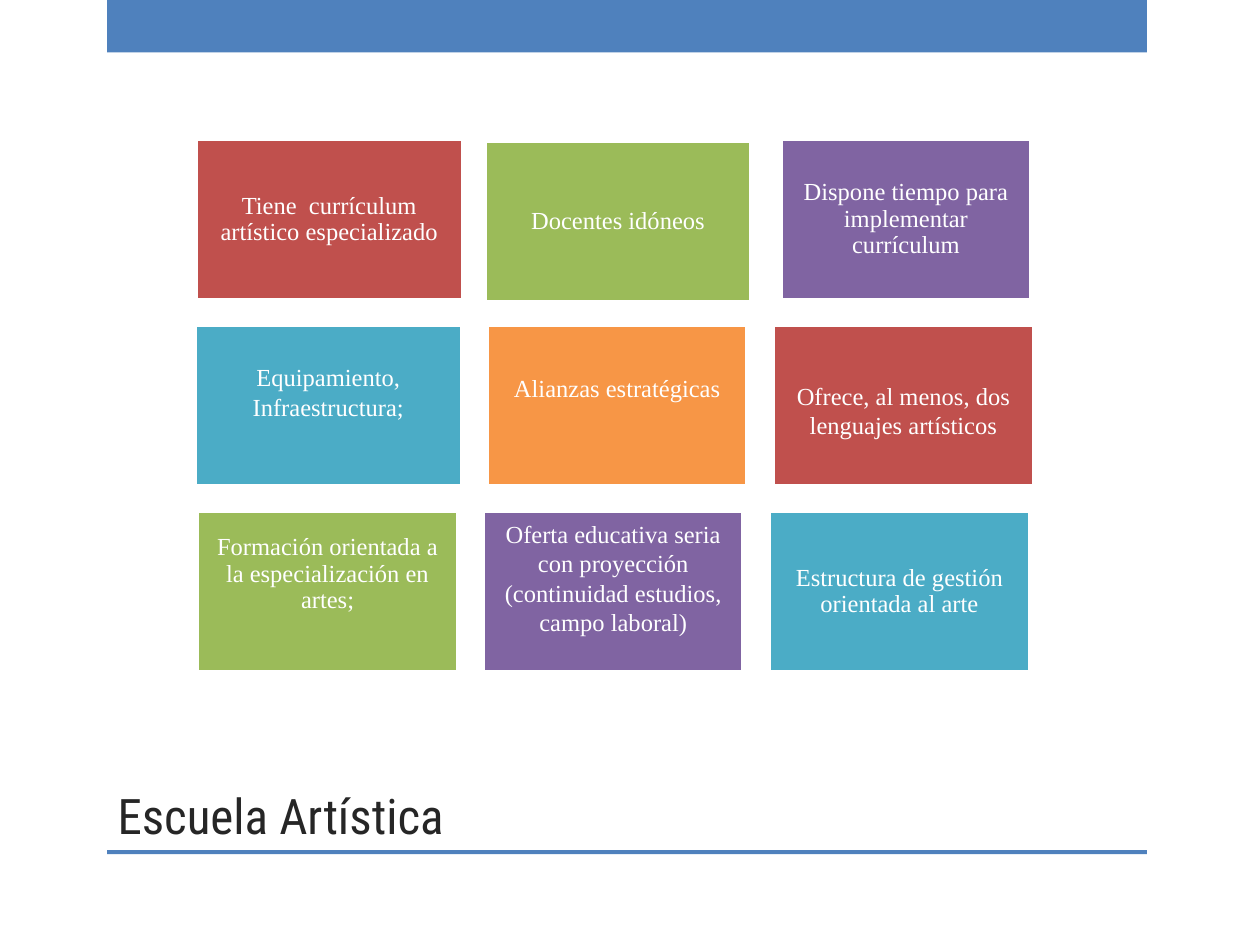
from typing import NamedTuple

from pptx import Presentation
from pptx.dml.color import RGBColor
from pptx.enum.shapes import MSO_SHAPE
from pptx.enum.text import MSO_ANCHOR, PP_ALIGN
from pptx.util import Cm, Pt

RECT = MSO_SHAPE.RECTANGLE
MIDDLE, BOTTOM = MSO_ANCHOR.MIDDLE, MSO_ANCHOR.BOTTOM
CENTER, LEFT = PP_ALIGN.CENTER, PP_ALIGN.LEFT

BLUE, RED, GREEN = "4F81BD", "C0504D", "9BBB59"
PURPLE, AQUA, ORANGE = "8064A2", "4BACC6", "F79646"
WHITE, DARK = "FFFFFF", "262626"

# Card grid, in cm
ROW_TOP, ROW_PITCH, CARD_HEIGHT = 2.81, 3.75, 3.23
INSET = 0.15


class Card(NamedTuple):
    text: str
    color: str
    left: float
    width: float
    spacing: float = 1.0
    shift: float = 0.0  # moves the centred text down, or up if negative
    drop: float = 0.0  # offset from the top of the row


ROWS = [
    [
        Card("Tiene  currículum artístico especializado", RED, 3.96, 5.36, 0.9),
        Card("Docentes idóneos", GREEN, 9.78, 5.36, 0.9, drop=0.04),
        Card("Dispone tiempo para implementar currículum", PURPLE, 15.75, 5.03, 0.9),
    ],
    [
        Card("Equipamiento, Infraestructura;", AQUA, 3.94, 5.36, shift=-0.28),
        Card("Alianzas estratégicas", ORANGE, 9.83, 5.23, shift=-0.35),
        Card("Ofrece, al menos, dos lenguajes artísticos", RED, 15.6, 5.23, shift=0.1),
    ],
    [
        Card("Formación orientada a la especialización en artes;", GREEN,
             3.99, 5.23, 0.9, shift=-0.35),
        Card("Oferta educativa seria con proyección (continuidad estudios, campo laboral)",
             PURPLE, 9.75, 5.23, shift=-0.28),
        Card("Estructura de gestión orientada al arte", AQUA, 15.52, 5.23, 0.9),
    ],
]


def rgb(value: str) -> RGBColor:
    return RGBColor.from_string(value)


def set_attrs(target, values: dict) -> None:
    for name, value in values.items():
        setattr(target, name, value)


def add_rect(s, left: float, top: float, width: float, height: float, color: str):
    sp = s.shapes.add_shape(RECT, Cm(left), Cm(top), Cm(width), Cm(height))
    sp.shadow.inherit = False
    sp.fill.solid()
    sp.fill.fore_color.rgb = rgb(color)
    sp.line.fill.background()
    return sp


def write(sp, text: str, frame: dict, para: dict, font: dict, color: str) -> None:
    tf = sp.text_frame
    set_attrs(tf, {"word_wrap": True, **frame})
    p = tf.paragraphs[0]
    set_attrs(p, para)
    r = p.add_run()
    r.text = text
    set_attrs(r.font, font)
    r.font.color.rgb = rgb(color)


def add_card(s, card: Card, top: float) -> None:
    sp = add_rect(s, card.left, top + card.drop, card.width, CARD_HEIGHT, card.color)
    sp.line.color.rgb = rgb(WHITE)
    sp.line.width = Pt(1.75)
    frame = {
        "vertical_anchor": MIDDLE,
        "margin_left": Cm(INSET),
        "margin_right": Cm(INSET),
        "margin_top": Cm(INSET + max(2 * card.shift, 0)),
        "margin_bottom": Cm(INSET + max(-2 * card.shift, 0)),
    }
    para = {"alignment": CENTER, "line_spacing": card.spacing}
    font = {"name": "Times New Roman", "size": Pt(14)}
    write(sp, card.text, frame, para, font, WHITE)


def main() -> None:
    prs = Presentation()
    prs.slide_width, prs.slide_height = Cm(25.4), Cm(19.05)
    s = prs.slides.add_slide(prs.slide_layouts[6])

    # Top band and bottom rule
    add_rect(s, 2.16, 0, 20.96, 1.06, BLUE)
    add_rect(s, 2.16, 17.14, 20.96, 0.08, BLUE)

    # Title
    title = s.shapes.add_textbox(Cm(2.12), Cm(12.7), Cm(18.84), Cm(4.45))
    write(title, "Escuela Artística", {"vertical_anchor": BOTTOM},
          {"alignment": LEFT}, {"name": "Roboto Condensed", "size": Pt(28)}, DARK)

    # Cards
    for i, row in enumerate(ROWS):
        for card in row:
            add_card(s, card, ROW_TOP + i * ROW_PITCH)

    prs.save("out.pptx")


if __name__ == "__main__":
    main()
